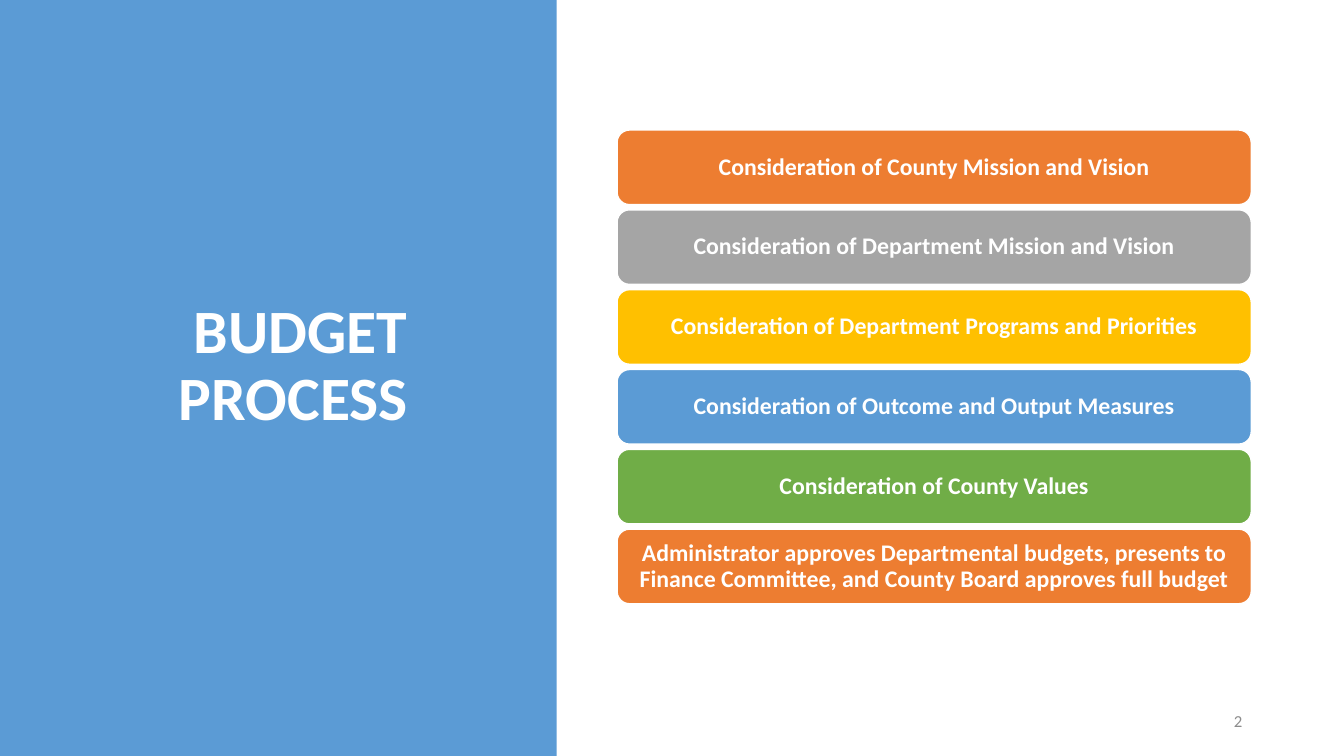
from dataclasses import dataclass

from pptx import Presentation
from pptx.dml.color import RGBColor as RGB
from pptx.enum.shapes import MSO_SHAPE as Shape
from pptx.enum.text import MSO_ANCHOR as Anchor, PP_ALIGN as Align
from pptx.util import Inches, Pt


@dataclass
class Theme:
    font: str = "Calibri"
    white: str = "FFFFFF"
    blue: str = "5B9BD5"
    orange: str = "ED7D31"
    gray: str = "A5A5A5"
    gold: str = "FFC000"
    green: str = "70AD47"
    muted: str = "8C8C8C"
    title: int = 44
    step: int = 17
    number: int = 12


theme = Theme()


def add_block(kind, left, top, width, height, fill):
    block = slide.shapes.add_shape(
        kind, Inches(left), Inches(top), Inches(width), Inches(height))
    block.shadow.inherit = False
    block.fill.solid()
    block.fill.fore_color.rgb = RGB.from_string(fill)
    block.line.fill.background()
    return block


def set_text(shape, text, size, color, align=Align.CENTER, bold=True, space=0.9):
    frame = shape.text_frame
    frame.text = text
    frame.word_wrap = True
    frame.vertical_anchor = Anchor.MIDDLE
    para = frame.paragraphs[0]
    para.alignment = align
    para.line_spacing = space
    font = para.runs[0].font
    font.name, font.size, font.bold = theme.font, Pt(size), bold
    font.color.rgb = RGB.from_string(color)


deck = Presentation()
deck.slide_width, deck.slide_height = Inches(13.33), Inches(7.5)
slide = deck.slides.add_slide(deck.slide_layouts[6])

# Left panel and title
add_block(Shape.RECTANGLE, 0, 0, 5.52, 7.5, theme.blue)
title = slide.shapes.add_textbox(
    Inches(0.92), Inches(0.68), Inches(4.12), Inches(5.92))
set_text(title, "BUDGET PROCESS ", theme.title, theme.white)

# Process steps, evenly spaced from first to last
steps = [
    ("Consideration of County Mission and Vision", theme.orange),
    ("Consideration of Department Mission and Vision", theme.gray),
    ("Consideration of Department Programs and Priorities", theme.gold),
    ("Consideration of Outcome and Output Measures", theme.blue),
    ("Consideration of County Values", theme.green),
    ("Administrator approves Departmental budgets, presents to "
     "Finance Committee, and County Board approves full budget", theme.orange),
]
first, last = 1.29, 5.25
pitch = (last - first) / (len(steps) - 1)
for i, (text, color) in enumerate(steps):
    bar = add_block(Shape.ROUNDED_RECTANGLE, 6.12, first + i * pitch,
                    6.29, 0.74, color)
    bar.line.color.rgb = RGB.from_string(theme.white)
    bar.line.width = Pt(1)
    frame = bar.text_frame
    frame.margin_left = frame.margin_right = Inches(0.07)
    frame.margin_top = frame.margin_bottom = Inches(0.07)
    set_text(bar, text, theme.step, theme.white)

# Slide number
number = slide.shapes.add_textbox(
    Inches(9.42), Inches(6.95), Inches(3), Inches(0.4))
set_text(number, "2", theme.number, theme.muted, Align.RIGHT, False, 1.0)

deck.save("out.pptx")
